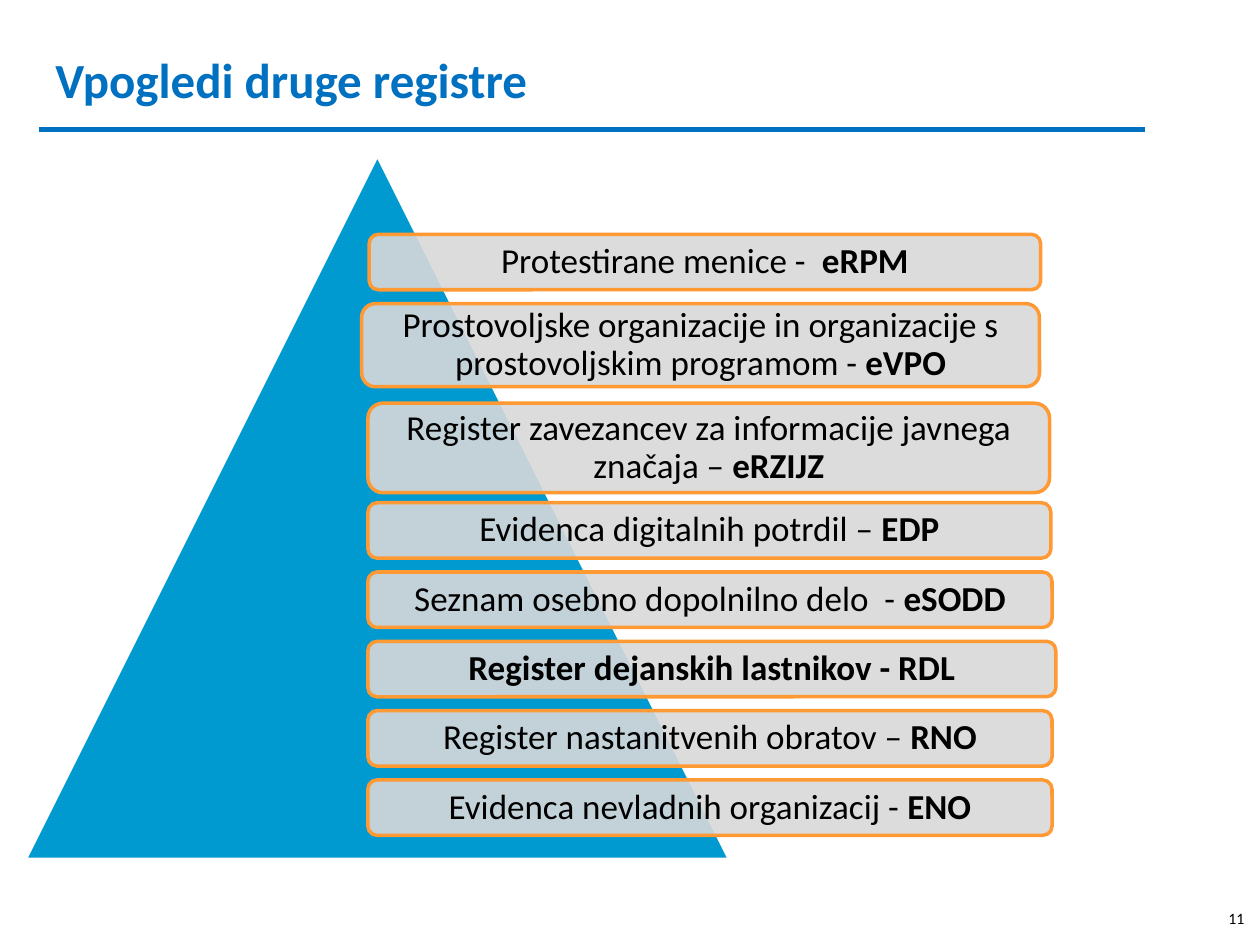
import dataclasses
import pptx
import pptx.dml.color
import pptx.enum.shapes
import pptx.enum.text
import pptx.oxml
import pptx.oxml.ns
import pptx.util

Shapes = pptx.enum.shapes.MSO_SHAPE
Align = pptx.enum.text.PP_ALIGN
Anchor = pptx.enum.text.MSO_ANCHOR


@dataclasses.dataclass(frozen=True)
class Theme:
    font: str = "Calibri"
    heading: str = "0070C0"
    pyramid: str = "009AD0"
    panel: str = "D9D9D9"
    border: str = "FF9933"
    paper: str = "FFFFFF"
    ink: str = "000000"
    title_size: int = 28
    label_size: int = 20
    number_size: int = 9
    rule_width: int = 3
    border_width: int = 2


def rgb(value):
    return pptx.dml.color.RGBColor.from_string(value)


def write_text(frame, text, *, font, size, color, bold=False, bold_tail="",
               align=Align.LEFT, anchor=Anchor.TOP, spacing=1.0):
    frame.word_wrap = True
    frame.vertical_anchor = anchor
    paragraph = frame.paragraphs[0]
    paragraph.alignment = align
    paragraph.line_spacing = spacing
    for content, weight in ((text, bold), (bold_tail, True)):
        if content:
            run = paragraph.add_run()
            run.text = content
            run.font.name = font
            run.font.size = pptx.util.Pt(size)
            run.font.bold = weight
            run.font.color.rgb = rgb(color)


class RegistrySlide:
    COLUMNS = 100
    ROWS = 75

    def __init__(self, presentation, theme):
        self.theme = theme
        self.column = presentation.slide_width / self.COLUMNS
        self.row = presentation.slide_height / self.ROWS
        self.slide = presentation.slides.add_slide(presentation.slide_layouts[6])

    def place(self, left, top, width, height):
        return (round(left * self.column), round(top * self.row),
                round(width * self.column), round(height * self.row))

    def text(self, area, content, **style):
        box = self.slide.shapes.add_textbox(*self.place(*area))
        write_text(box.text_frame, content, font=self.theme.font, **style)

    def rule(self, left, right, row):
        x, y, width, _ = self.place(left, row, right - left, 0)
        connector = self.slide.shapes.add_connector(
            pptx.enum.shapes.MSO_CONNECTOR.STRAIGHT, x, y, x + width, y)
        connector.line.color.rgb = rgb(self.theme.heading)
        connector.line.width = pptx.util.Pt(self.theme.rule_width)
        properties = connector._element.spPr
        properties.append(pptx.oxml.parse_xml(
            f'<a:effectLst {pptx.oxml.ns.nsdecls("a")}/>'))

    def shape(self, kind, area, fill, border):
        shape = self.slide.shapes.add_shape(kind, *self.place(*area))
        shape.shadow.inherit = False
        shape.fill.solid()
        shape.fill.fore_color.rgb = rgb(fill)
        shape.line.color.rgb = rgb(border)
        shape.line.width = pptx.util.Pt(self.theme.border_width)
        return shape

    def panel(self, area, content, code):
        theme = self.theme
        shape = self.shape(Shapes.ROUNDED_RECTANGLE, area, theme.panel, theme.border)
        color = shape._element.spPr.find(".//" + pptx.oxml.ns.qn("a:srgbClr"))
        color.append(pptx.oxml.parse_xml(
            f'<a:alpha {pptx.oxml.ns.nsdecls("a")} val="90000"/>'))
        frame = shape.text_frame
        frame.margin_top = frame.margin_bottom = 0
        write_text(frame, content, bold_tail=code, font=theme.font,
                   size=theme.label_size, color=theme.ink, align=Align.CENTER,
                   anchor=Anchor.MIDDLE, spacing=0.9)


REGISTERS = [
    (29.3, 18.6, 53.3, 4.4, "Protestirane menice -  ", "eRPM"),
    (28.7, 24.1, 53.8, 6.6,
     "Prostovoljske organizacije in organizacije s prostovoljskim programom - ", "eVPO"),
    (29.2, 32.0, 54.1, 7.1,
     "Register zavezancev za informacije javnega značaja – ", "eRZIJZ"),
]
SINGLE_LINE_REGISTERS = [
    (54.2, "Evidenca digitalnih potrdil – ", "EDP"),
    (54.3, "Seznam osebno dopolnilno delo  - ", "eSODD"),
    (54.6, "", "Register dejanskih lastnikov - RDL"),
    (54.3, "Register nastanitvenih obratov – ", "RNO"),
    (54.3, "Evidenca nevladnih organizacij - ", "ENO"),
]
FIRST_SINGLE_ROW, ROW_PITCH = 39.9, 5.5


def main():
    presentation = pptx.Presentation()
    presentation.slide_width = pptx.util.Inches(10)
    presentation.slide_height = pptx.util.Inches(7.5)
    theme = Theme()
    page = RegistrySlide(presentation, theme)

    page.text((3.4, 3.4, 88.2, 6.9), "Vpogledi druge registre",
              size=theme.title_size, color=theme.heading, bold=True)
    page.rule(3.1, 90.9, 10.3)
    page.shape(Shapes.ISOSCELES_TRIANGLE, (2, 12.3, 55.9, 55.9),
               theme.pyramid, theme.paper)
    for *area, content, code in REGISTERS:
        page.panel(area, content, code)
    for index, (width, content, code) in enumerate(SINGLE_LINE_REGISTERS):
        top = FIRST_SINGLE_ROW + index * ROW_PITCH
        page.panel((29.2, top, width, 4.4), content, code)
    page.text((96.5, 71.6, 3.5, 3.4), "11",
              size=theme.number_size, color=theme.ink)
    presentation.save("out.pptx")


if __name__ == "__main__":
    main()
